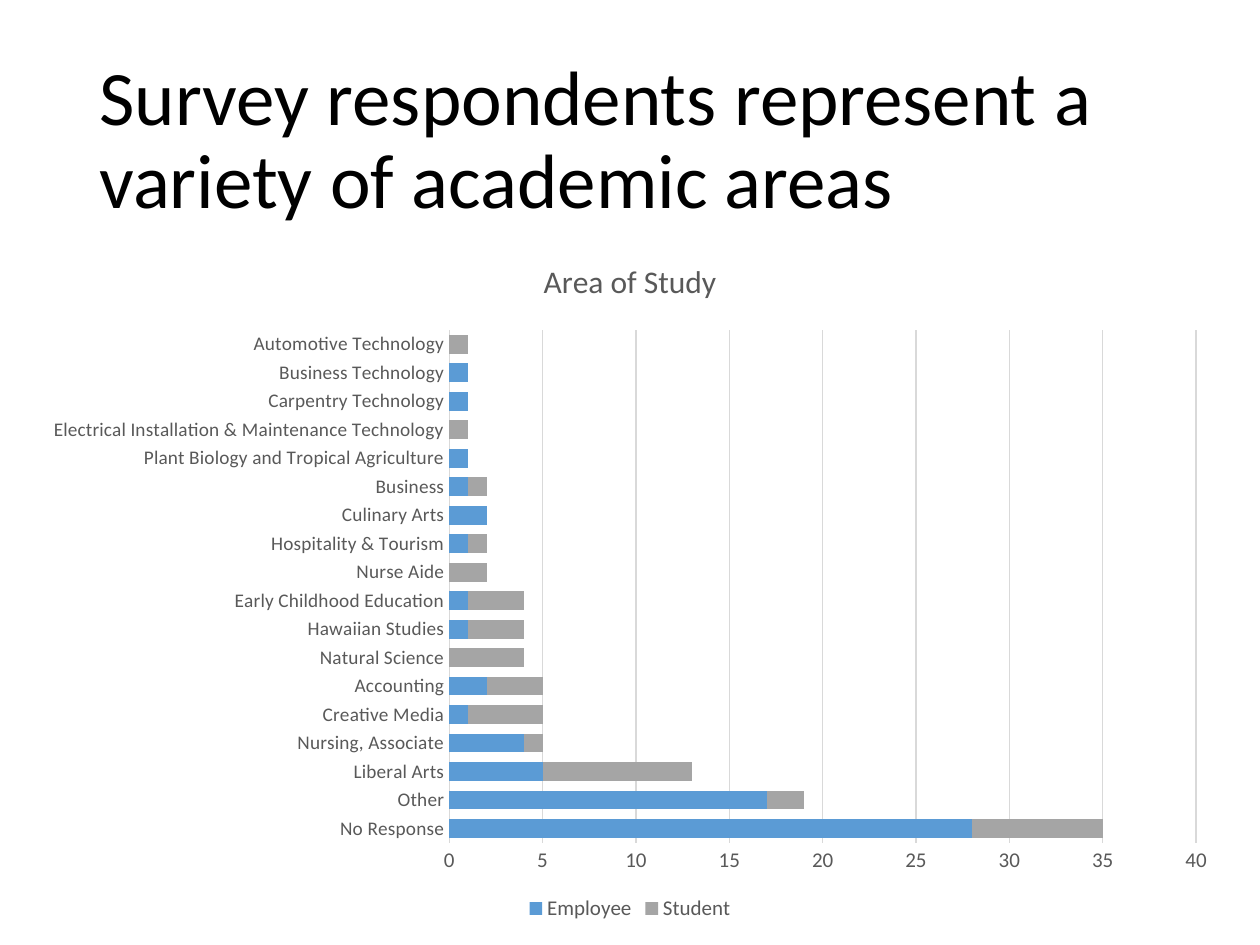
from lxml import etree
from pptx import Presentation
from pptx.chart.data import CategoryChartData
from pptx.dml.color import RGBColor
from pptx.enum.chart import XL_CHART_TYPE, XL_LEGEND_POSITION, XL_TICK_MARK
from pptx.enum.text import MSO_ANCHOR
from pptx.oxml.ns import qn
from pptx.util import Inches, Pt

STACKED = XL_CHART_TYPE.BAR_STACKED
BOTTOM = XL_LEGEND_POSITION.BOTTOM
NO_TICK = XL_TICK_MARK.NONE
MIDDLE = MSO_ANCHOR.MIDDLE

COLORS = {
    "title": "000000",
    "label": "595959",
    "grid": "D9D9D9",
    "Employee": "5B9BD5",
    "Student": "A5A5A5",
}

AREAS = [
    ("No Response", 28, 7),
    ("Other", 17, 2),
    ("Liberal Arts", 5, 8),
    ("Nursing, Associate", 4, 1),
    ("Creative Media", 1, 4),
    ("Accounting", 2, 3),
    ("Natural Science", None, 4),
    ("Hawaiian Studies", 1, 3),
    ("Early Childhood Education", 1, 3),
    ("Nurse Aide", None, 2),
    ("Hospitality & Tourism", 1, 1),
    ("Culinary Arts", 2, None),
    ("Business", 1, 1),
    ("Plant Biology and Tropical Agriculture", 1, None),
    ("Electrical Installation & Maintenance Technology", None, 1),
    ("Carpentry Technology", 1, None),
    ("Business Technology", 1, None),
    ("Automotive Technology", None, 1),
]


class Deck:
    font = "Calibri"
    grid = 100

    def __init__(self, width, height):
        self.prs = Presentation()
        self.prs.slide_width = Inches(width)
        self.prs.slide_height = Inches(height)
        self.s = self.prs.slides.add_slide(self.prs.slide_layouts[6])

    def box(self, col, row, cols, rows):
        w = self.prs.slide_width / self.grid
        h = self.prs.slide_height / self.grid
        return [round(v) for v in (col * w, row * h, cols * w, rows * h)]

    def style(self, font, size, color):
        font.name = self.font
        font.size = Pt(size)
        font.bold = False
        font.color.rgb = RGBColor.from_string(COLORS[color])

    def line(self, fmt):
        fmt.line.width = Pt(0.75)
        fmt.line.color.rgb = RGBColor.from_string(COLORS["grid"])

    def title(self, text, *place):
        tf = self.s.shapes.add_textbox(*self.box(*place)).text_frame
        tf.word_wrap = True
        tf.vertical_anchor = MIDDLE
        p = tf.paragraphs[0]
        p.line_spacing = 0.9
        r = p.add_run()
        r.text = text
        self.style(r.font, 44, "title")

    def stacked_bars(self, title, names, rows, plot_area, *place):
        labels, *columns = zip(*rows)
        data = CategoryChartData()
        data.categories = labels
        for name, values in zip(names, columns):
            data.add_series(name, values)
        chart = self.s.shapes.add_chart(STACKED, *self.box(*place), data).chart
        self.style(chart.font, 10, "title")

        chart.has_title = True
        r = chart.chart_title.text_frame.paragraphs[0].add_run()
        r.text = title
        self.style(r.font, 18, "label")
        chart.chart_title.include_in_layout = False

        chart.has_legend = True
        chart.legend.position = BOTTOM
        chart.legend.include_in_layout = False
        self.style(chart.legend.font, 12, "label")

        plot = chart.plots[0]
        plot.gap_width = 52
        plot.overlap = 100
        plot.vary_by_categories = False
        for series in plot.series:
            series.format.fill.solid()
            series.format.fill.fore_color.rgb = RGBColor.from_string(COLORS[series.name])

        for axis, size in ((chart.category_axis, 11), (chart.value_axis, 12)):
            axis.major_tick_mark = axis.minor_tick_mark = NO_TICK
            self.style(axis.tick_labels.font, size, "label")
        self.line(chart.category_axis.format)
        axis = chart.value_axis
        axis.format.line.fill.background()
        axis.minimum_scale, axis.maximum_scale, axis.major_unit = 0, 40, 5
        axis.has_major_gridlines = True
        self.line(axis.major_gridlines.format)
        self.place_plot(chart, plot_area)

    def place_plot(self, chart, plot_area):
        area = chart._chartSpace.find(".//" + qn("c:plotArea"))
        for old in area.findall(qn("c:layout")):
            area.remove(old)
        layout = etree.Element(qn("c:layout"))
        manual = etree.SubElement(layout, qn("c:manualLayout"))
        settings = [("layoutTarget", "inner"), ("xMode", "edge"), ("yMode", "edge")]
        settings += zip("xywh", plot_area)
        for tag, value in settings:
            etree.SubElement(manual, qn("c:" + tag)).set("val", str(value))
        area.insert(0, layout)


def main():
    deck = Deck(10, 7.5)
    deck.title("Survey respondents represent a variety of academic areas",
               6.9, 5.33, 86.2, 19.33)
    deck.stacked_bars("Area of Study", ("Employee", "Student"), AREAS,
                      (0.35, 0.14, 0.62, 0.74), 2.2, 24.67, 95.6, 73.33)
    deck.prs.save("out.pptx")


if __name__ == "__main__":
    main()
